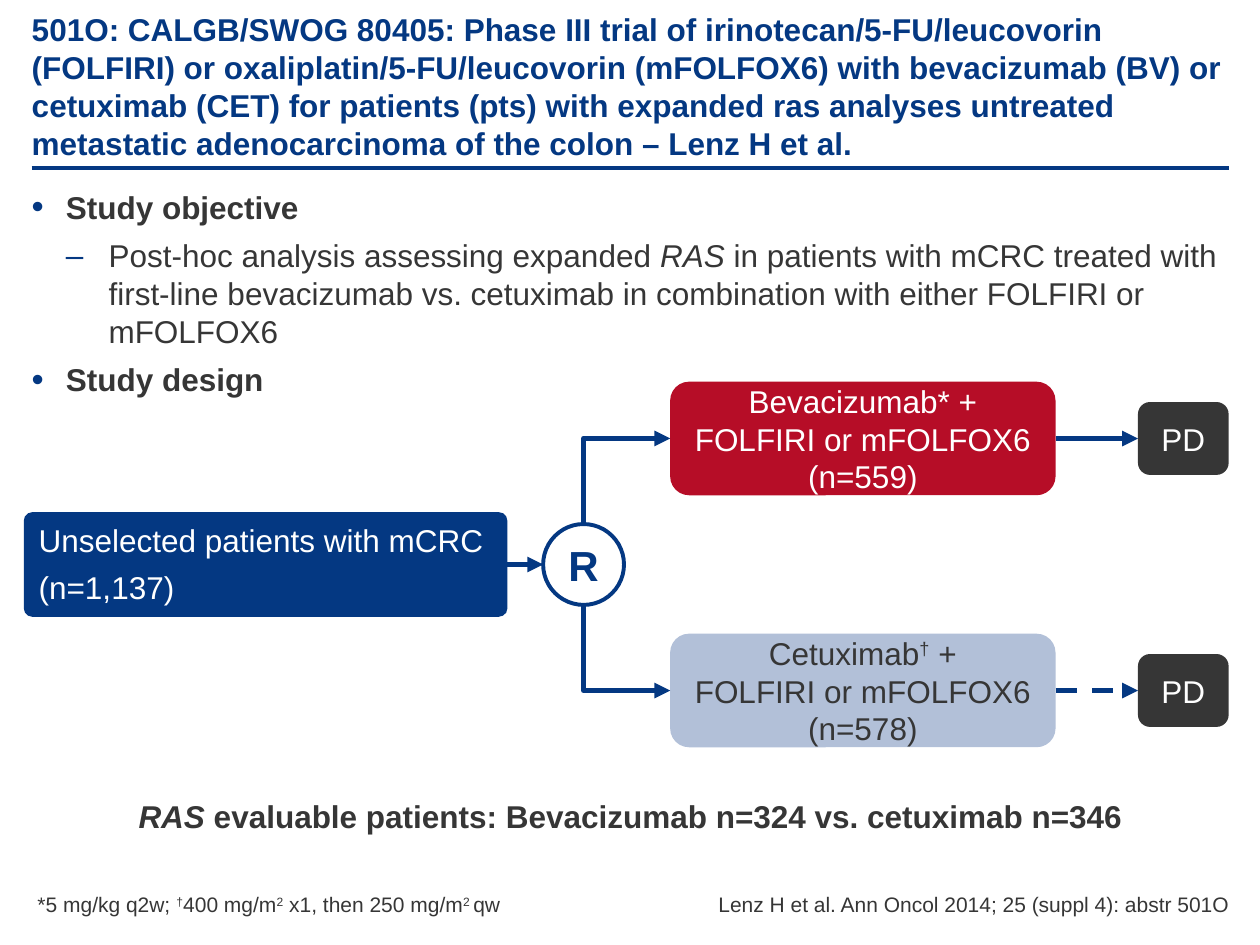
from lxml.etree import SubElement
from pptx import Presentation
from pptx.dml.color import RGBColor
from pptx.enum.dml import MSO_LINE
from pptx.enum.shapes import MSO_CONNECTOR, MSO_SHAPE
from pptx.enum.text import MSO_ANCHOR, MSO_AUTO_SIZE, PP_ALIGN
from pptx.oxml.ns import qn
from pptx.util import Cm, Pt

NAVY, GREY, WHITE = "043882", "363636", "FFFFFF"
RED, PALE_BLUE = "B60D27", "B2C0D8"
LEFT, RIGHT = 1, 3


def color(hex_code):
    return RGBColor.from_string(hex_code)


class SlideBuilder:
    font = "Arial"
    size = 18

    def __init__(self, slide):
        self.slide = slide

    def frame(self, shape, anchor, insets=(0, 0, 0, 0), wrap=True):
        frame = shape.text_frame
        frame.auto_size = MSO_AUTO_SIZE.NONE
        frame.word_wrap = wrap
        frame.vertical_anchor = anchor
        (frame.margin_left, frame.margin_top,
         frame.margin_right, frame.margin_bottom) = (Cm(i) for i in insets)
        return frame

    def fill_text(self, frame, paragraphs, ink, align=PP_ALIGN.LEFT, size=None, after=0):
        """Each paragraph is a list of (text, flags): b bold, i italic, ^ superscript."""
        for index, runs in enumerate(paragraphs):
            paragraph = frame.paragraphs[0] if index == 0 else frame.add_paragraph()
            paragraph.alignment = align
            paragraph.space_after = Pt(after)
            for text, flags in runs:
                for line_number, line in enumerate(text.split("\n")):
                    if line_number:
                        paragraph.add_line_break()
                    run = paragraph.add_run()
                    run.text = line
                    run.font.name = self.font
                    run.font.size = Pt(size or self.size)
                    run.font.color.rgb = color(ink)
                    run.font.bold = "b" in flags
                    run.font.italic = "i" in flags
                    if "^" in flags:
                        run.font._element.set("baseline", "30000")

    def title(self, text, box):
        title = self.slide.shapes.title
        title.left, title.top, title.width, title.height = (Cm(v) for v in box)
        frame = self.frame(title, MSO_ANCHOR.BOTTOM, (0, 0.13, 0, 0))
        self.fill_text(frame, [[(text, "b")]], NAVY)

    def text(self, box, paragraphs, anchor, insets=(0, 0, 0, 0), **style):
        shape = self.slide.shapes.add_textbox(*(Cm(v) for v in box))
        frame = self.frame(shape, anchor, insets)
        self.fill_text(frame, paragraphs, GREY, **style)
        return frame

    def bullet(self, paragraph, level, char, indent, hanging, percent):
        paragraph.level = level
        properties = paragraph._p.get_or_add_pPr()
        properties.set("marL", str(Cm(indent)))
        properties.set("indent", str(-Cm(hanging)))
        SubElement(SubElement(properties, qn("a:buClr")), qn("a:srgbClr"), val=NAVY)
        SubElement(properties, qn("a:buSzPct"), val=str(percent * 1000))
        SubElement(properties, qn("a:buFont"), typeface=self.font)
        SubElement(properties, qn("a:buChar"), char=char)

    def node(self, left, middle, width, height, paragraphs, fill, ink=WHITE, outline=None,
             kind=MSO_SHAPE.ROUNDED_RECTANGLE, corner=0.167, anchor=MSO_ANCHOR.MIDDLE,
             insets=(0.25, 0, 0.25, 0), wrap=True, align=PP_ALIGN.CENTER, **style):
        shape = self.slide.shapes.add_shape(
            kind, Cm(left), Cm(middle - height / 2), Cm(width), Cm(height))
        shape.shadow.inherit = False
        shape.fill.solid()
        shape.fill.fore_color.rgb = color(fill)
        if outline:
            shape.line.color.rgb = color(outline)
            shape.line.width = Pt(2.25)
        else:
            shape.line.fill.background()
        if len(shape.adjustments):
            shape.adjustments[0] = corner
        frame = self.frame(shape, anchor, insets, wrap)
        self.fill_text(frame, paragraphs, ink, align, **style)
        return shape

    def line(self, start, end, kind=MSO_CONNECTOR.STRAIGHT, width=3, dashed=False, arrow=True):
        connector = self.slide.shapes.add_connector(kind, *(Cm(v) for v in (*start, *end)))
        connector.line.color.rgb = color(NAVY)
        connector.line.width = Pt(width)
        if dashed:
            connector.line.dash_style = MSO_LINE.DASH
        if arrow:
            outline = connector._element.spPr.find(qn("a:ln"))
            SubElement(outline, qn("a:tailEnd"), type="triangle")
        SubElement(connector._element.spPr, qn("a:effectLst"))
        return connector

    def elbow(self, start, end):
        """Go vertically from start, then right to end: a turned one-corner connector."""
        center_x, center_y = (start[0] + end[0]) / 2, (start[1] + end[1]) / 2
        half_run, half_rise = (end[0] - start[0]) / 2, abs(end[1] - start[1]) / 2
        upward = end[1] < start[1]
        flip = 1 if upward else -1
        connector = self.line((center_x + half_rise, center_y + flip * half_run),
                              (center_x - half_rise, center_y - flip * half_run),
                              MSO_CONNECTOR.ELBOW)
        properties = connector._element.spPr
        properties.find(qn("a:xfrm")).set("rot", str((90 if upward else 270) * 60000))
        properties.find(qn("a:prstGeom")).set("prst", "bentConnector2")


def main():
    deck = Presentation()
    deck.slide_width, deck.slide_height = Cm(25.4), Cm(19.05)
    page = SlideBuilder(deck.slides.add_slide(deck.slide_layouts[5]))
    margin, content_width = 0.64, 24.13

    # Title and rule
    page.title("501O: CALGB/SWOG 80405: Phase III trial of irinotecan/5-FU/leucovorin\n"
               "(FOLFIRI) or oxaliplatin/5-FU/leucovorin (mFOLFOX6) with bevacizumab (BV) or\n"
               "cetuximab (CET) for patients (pts) with expanded ras analyses untreated "
               "metastatic adenocarcinoma of the colon – Lenz H et al.",
               (margin, 0.64, content_width, 2.62))
    page.line((margin, 3.38), (margin + content_width, 3.38), width=2.25, arrow=False)

    # Objective and design
    objective = page.text((margin, 3.66, content_width, 14.76), [
        [("Study objective", "b")],
        [("Post-hoc analysis assessing expanded ", ""), ("RAS ", "i"),
         ("in patients with mCRC treated with first-line bevacizumab vs. cetuximab "
          "in combination with either FOLFIRI or mFOLFOX6", "")],
        [("Study design", "b")],
    ], MSO_ANCHOR.TOP, (0, 0.13, 0, 0.13), after=6)
    heading_bullet, detail_bullet = (0, "•", 0.69, 0.69, 110), (1, "–", 1.55, 0.86, 100)
    for paragraph, style in zip(objective.paragraphs,
                                (heading_bullet, detail_bullet, heading_bullet)):
        page.bullet(paragraph, *style)

    # Patients and randomisation
    middle, arm_offset = 11.38, 2.54
    circle_left, diameter = 10.95, 1.63
    circle_x = circle_left + diameter / 2
    patients = page.node(0.48, middle, 9.75, 2.11,
                         [[("Unselected patients with mCRC", "")], [("(n=1,137)", "")]],
                         NAVY, corner=0.082, anchor=MSO_ANCHOR.TOP,
                         insets=(0.25, 0.13, 0.25, 0.13), align=PP_ALIGN.LEFT, after=5.4)
    page.node(circle_left, middle, diameter, diameter, [[("R", "b")]], WHITE, NAVY,
              outline=NAVY, kind=MSO_SHAPE.OVAL, wrap=False, size=24)
    page.line((10.23, middle), (circle_left, middle)).begin_connect(patients, RIGHT)

    # Treatment arms, each followed to progression
    arm_left = 13.51
    regimen = "FOLFIRI or mFOLFOX6 "
    arms = [
        (-1, [("Bevacizumab* +", "")], "(n=559)", RED, WHITE, False),
        (1, [("Cetuximab", ""), ("†", "^"), (" +", "")], "(n=578)", PALE_BLUE, GREY, True),
    ]
    for side, drug, count, fill, ink, dashed in arms:
        row = middle + side * arm_offset
        treatment = page.node(arm_left, row, 7.77, 2.29,
                              [drug, [(regimen + count, "")]], fill, ink)
        progression = page.node(22.94, row, 1.83, 1.47, [[("PD", "")]], GREY)
        page.elbow((circle_x, middle + side * diameter / 2), (arm_left, row))
        follow_up = page.line((21.28, row), (22.94, row), dashed=dashed)
        follow_up.begin_connect(treatment, RIGHT)
        follow_up.end_connect(progression, LEFT)

    # Evaluable patients
    page.text((1.37, 15.88, 22.68, 1.14),
              [[("RAS", "bi"),
                (" evaluable patients: Bevacizumab n=324 vs. cetuximab n=346", "b")]],
              MSO_ANCHOR.MIDDLE, (0, 0.13, 0, 0.13), align=PP_ALIGN.CENTER, after=6)

    # Footnote and reference
    page.text((margin, 17.98, 11.68, 0.51),
              [[(" *5 mg/kg q2w; ", ""), ("†", "^"), ("400 mg/m", ""), ("2", "^"),
                (" x1, then 250 mg/m", ""), ("2 ", "^"), ("qw", "")]],
              MSO_ANCHOR.BOTTOM, size=12)
    page.text((14.15, 17.98, 10.64, 0.51),
              [[("Lenz H et al. Ann Oncol 2014; 25 (suppl 4): abstr 501O", "")]],
              MSO_ANCHOR.BOTTOM, align=PP_ALIGN.RIGHT, size=12)

    deck.save("out.pptx")


if __name__ == "__main__":
    main()
